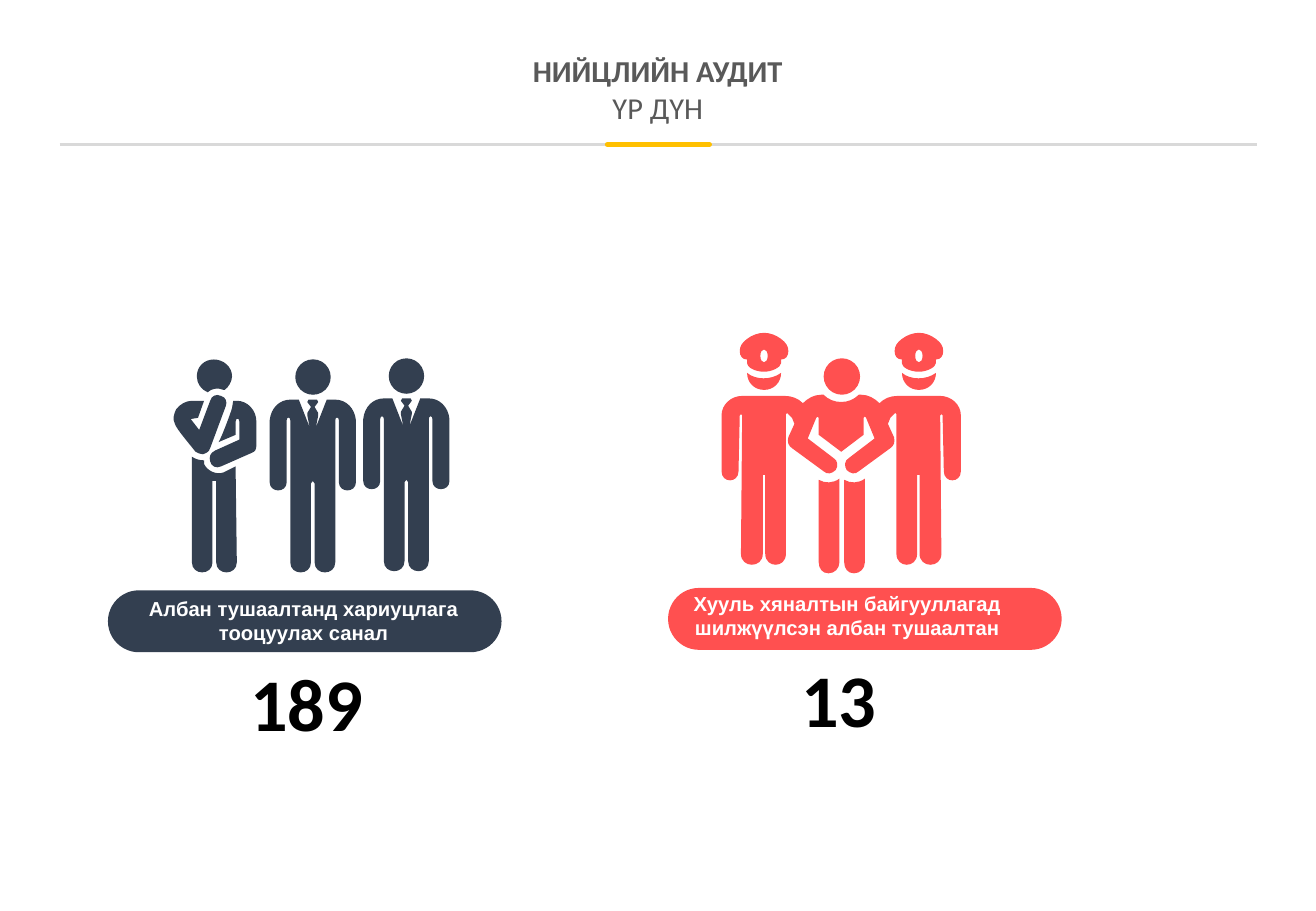
from dataclasses import dataclass

from lxml import etree
from pptx import Presentation
from pptx.dml.color import RGBColor
from pptx.enum import shapes, text
from pptx.oxml.ns import qn
from pptx.util import Pt


@dataclass(frozen=True)
class Theme:
    navy: str = "333F50"
    red: str = "FF5050"
    yellow: str = "FFC000"
    rule: str = "D9D9D9"
    title: str = "595959"
    number: str = "000000"
    caption: str = "FFFFFF"
    title_size: float = 18
    caption_size: float = 12
    number_size: float = 44


theme = Theme()
GRID = 0.72  # points per unit of the figure outlines

LEG = """M 674 395 L 674 463 C 674 468 677 472 682 472 C 687 472 691 468 691 463
 L 691 394 C 686 398 679 398 674 395"""
OFFICER_FACE = "M 615 307 C 615 315 621 321 629 321 C 637 321 643 315 643 307 C 635 313 622 313 615 307"
OFFICER_CAP = """M 626 293 C 626 286 632 286 632 293 C 632 300 626 300 626 293
 M 615 296 L 615 299 C 615 302 621 306 629 306 C 636 306 643 302 643 299 L 643 296
 C 647 296 649 293 649 289 C 649 285 647 282 643 279
 C 639 276 634 274 629 274 C 624 274 619 276 615 279 C 611 282 609 285 609 289
 C 609 293 611 296 615 296"""
ARREST_HALF = """M 692.5 331 C 687 331 682 329 678 325 L 676 325 C 670 325 665 328 661 332
 C 657 328 652 326 646 326 L 611 326 C 602 326 594 333 594 342 L 594 388
 C 594 398 608 398 608 388 L 609 342 L 610 341 L 611 342 L 610 456
 C 610 468 628 468 628 456 L 628 391 L 630 391 L 630 456
 C 630 468 647 468 647 456 L 647 341 L 648 340 L 652 344 L 654 349 L 649 360
 C 648 364 649 367 652 369 L 678 388 C 681 391 685 390 688 387
 C 690 384 690 379 686 377 L 665 361 L 672 344 L 673 343 L 674 344 L 674 358 L 692.5 372"""
SUIT_HALF = """M 257.5 329 L 254 329 L 253 331 L 256 335 L 253 340 L 253 342 L 255 352
 L 246 329 L 239 329 C 230 329 223 336 222 346 L 222 397 C 222 406 236 406 236 397
 L 236 346 C 236 343 239 343 239 346 L 239 463 C 239 474 256 474 256 463
 L 256 398 L 257.5 396"""
THINKER = [
    """M 171 323 C 174 320 179 319 184 321 L 185 321 C 188 319 191 314 191 310
 C 191 302 184 296 176 296 C 168 296 162 302 162 310 C 162 316 166 321 171 323""",
    """M 184 389 C 178 391 171 388 168 382 L 168 379 C 164 379 161 378 158 376
 L 158 463 C 158 474 175 474 175 463 L 175 396 L 178 396 L 178 463
 C 178 474 195 474 195 463 L 194 384 L 184 389""",
    """M 167 374 C 170 373 172 372 173 369 L 186 334 C 187 331 186 327 182 326
 C 178 324 174 326 173 330 L 164 354 L 157 345 L 163 344 L 168 330 L 158 330
 C 153 330 148 333 145 337 C 143 341 142 345 144 349 C 145 353 158 368 161 372
 C 163 373 165 374 167 374""",
    """M 211 347 C 211 338 204 330 195 330 L 192 330 L 191 336
 C 190 340 182 361 180 364 L 194 358 L 194 347 C 194 344 197 344 197 347
 L 197 362 L 177 371 C 173 373 172 376 173 380 C 174 384 178 386 182 384 L 207 373
 C 210 372 211 370 211 367 L 211 347""",
]

prs = Presentation()
prs.slide_width, prs.slide_height = Pt(780), Pt(540)
slide = prs.slides.add_slide(prs.slide_layouts[6])


def draw_outline(path, color, dx=0, dy=0, mirror=None):
    """Fill a path of M, L and C steps; mirror is the axis that completes a half outline."""
    contours, steps, numbers, step = [], [], [], ""
    for token in path.split():
        if token.isalpha():
            step = token
            if step == "M":
                contours.append([])
            else:
                steps.append(step)
            continue
        numbers.append(float(token))
        if len(numbers) == 2:
            contours[-1].append(tuple(numbers))
            numbers = []
    if mirror is not None:
        contours[0] += [(2 * mirror - x, y) for x, y in reversed(contours[0])]
        steps += ["L", *reversed(steps)]
    builder = None
    for contour in contours:
        points = [(x * 100 * GRID, y * 100 * GRID) for x, y in contour]
        if builder is None:
            builder = slide.shapes.build_freeform(*points[0], scale=Pt(1) / 100)
        else:
            builder.move_to(*points[0])
        builder.add_line_segments(points[1:], close=True)
    figure = builder.convert_to_shape(Pt(dx * GRID), Pt(dy * GRID))
    # Three consecutive line ends become the control points of one curve
    segments = iter(list(figure._element.iter(qn("a:lnTo"))))
    for step in steps:
        segment = next(segments)
        if step == "C":
            segment.tag = qn("a:cubicBezTo")
            for extra in (next(segments), next(segments)):
                segment.append(extra[0])
                extra.getparent().remove(extra)
    figure.shadow.inherit = False
    figure.fill.solid()
    figure.fill.fore_color.rgb = RGBColor.from_string(color)
    figure.line.fill.background()


def write(box, lines, size, color, font="Calibri", wrap=False):
    """Centre lines of (wording, bold) in a text box."""
    frame = slide.shapes.add_textbox(*map(Pt, box)).text_frame
    frame.word_wrap = wrap
    frame.auto_size = text.MSO_AUTO_SIZE.SHAPE_TO_FIT_TEXT
    frame.vertical_anchor = text.MSO_ANCHOR.MIDDLE if wrap else text.MSO_ANCHOR.TOP
    for i, (wording, bold) in enumerate(lines):
        paragraph = frame.add_paragraph() if i else frame.paragraphs[0]
        paragraph.text = wording
        paragraph.alignment = text.PP_ALIGN.CENTER
        paragraph.font.name, paragraph.font.size, paragraph.font.bold = font, Pt(size), bold
        paragraph.font.color.rgb = RGBColor.from_string(color)


# Arrested official between two officers
for dx in (0, 21):
    draw_outline(LEG, theme.red, dx)
draw_outline(ARREST_HALF, theme.red, mirror=692.5)
for dx in (0, 127.5):
    draw_outline(OFFICER_FACE, theme.red, dx)
    draw_outline(OFFICER_CAP, theme.red, dx)

# Three officials
for part in THINKER:
    draw_outline(part, theme.navy)
for dx, dy in ((0, 0), (77, -1)):
    draw_outline(SUIT_HALF, theme.navy, dx, dy, mirror=257.5)

# Heads and caption pills
OVAL, PILL = shapes.MSO_SHAPE.OVAL, shapes.MSO_SHAPE.ROUNDED_RECTANGLE
for kind, box, color in (
    (OVAL, (488.2, 212.4, 21.6, 21.6), theme.red),
    (OVAL, (175, 213, 21, 21), theme.navy),
    (OVAL, (230.4, 212.4, 21, 21), theme.navy),
    (PILL, (396, 348.5, 233.3, 36.7), theme.red),
    (PILL, (64, 349.9, 233.3, 36.7), theme.navy),
):
    solid = slide.shapes.add_shape(kind, *map(Pt, box))
    solid.shadow.inherit = False
    solid.fill.solid()
    solid.fill.fore_color.rgb = RGBColor.from_string(color)
    solid.line.fill.background()
    if kind == PILL:
        solid.adjustments[0] = 0.5

for caption, caption_box, number, number_box in (
    ("Хууль хяналтын байгууллагад шилжүүлсэн албан тушаалтан", (396, 347, 212.4, 36),
     "13", (458, 383.8, 78.5, 60.5)),
    ("Албан тушаалтанд хариуцлага тооцуулах санал", (80.6, 349.9, 198.7, 36),
     "189", (126.7, 385.9, 110.2, 60.5)),
):
    write(caption_box, [(caption, True)], theme.caption_size, theme.caption, "Arial", wrap=True)
    write(number_box, [(number, True)], theme.number_size, theme.number)

write((286.6, 27.4, 206.6, 51), [("НИЙЦЛИЙН АУДИТ", True), ("ҮР ДҮН", False)],
      theme.title_size, theme.title)

for left, right, color, width, cap in (
    (35.3, 745.2, theme.rule, 1.5, "flat"),
    (360, 420.5, theme.yellow, 3, "rnd"),
):
    rule = slide.shapes.add_connector(shapes.MSO_CONNECTOR.STRAIGHT,
                                      Pt(left), Pt(85.7), Pt(right), Pt(85.7))
    rule.line.color.rgb = RGBColor.from_string(color)
    rule.line.width = Pt(width)
    rule.line._get_or_add_ln().set("cap", cap)
    etree.SubElement(rule._element.spPr, qn("a:effectLst"))

prs.save("out.pptx")
